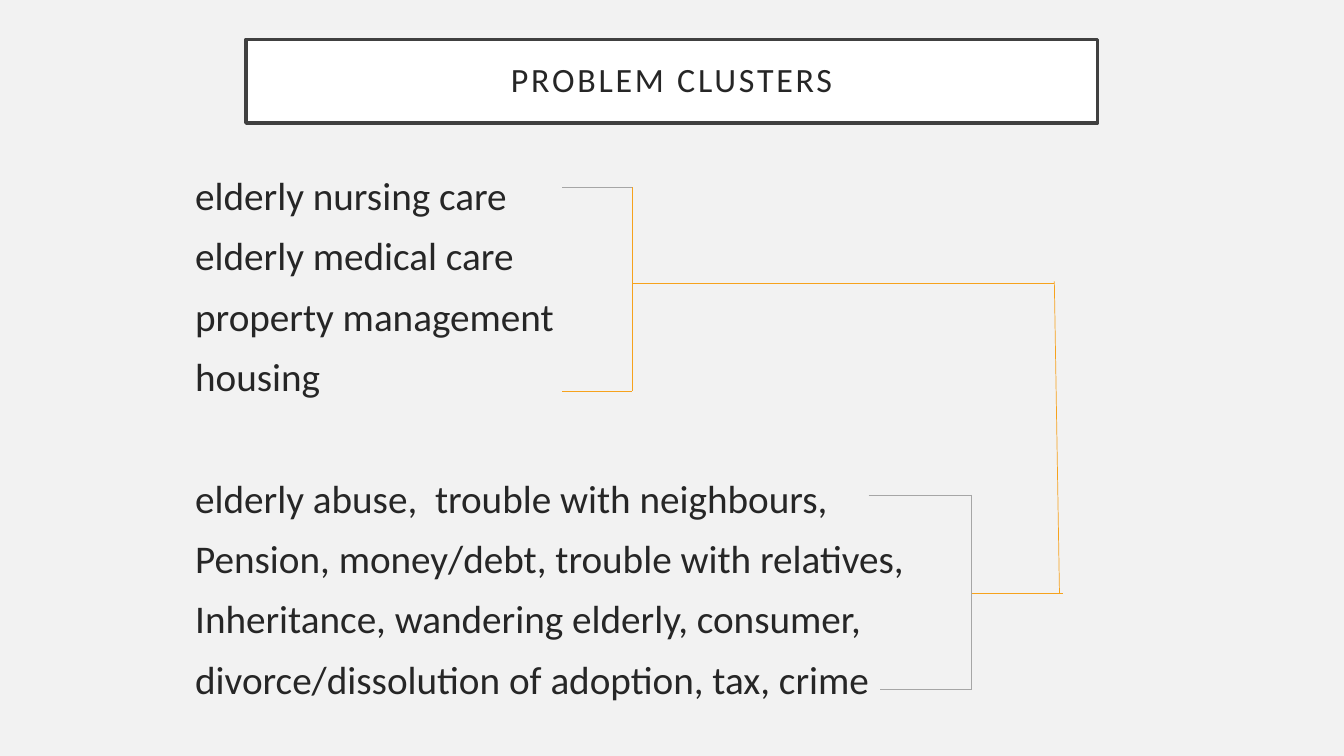
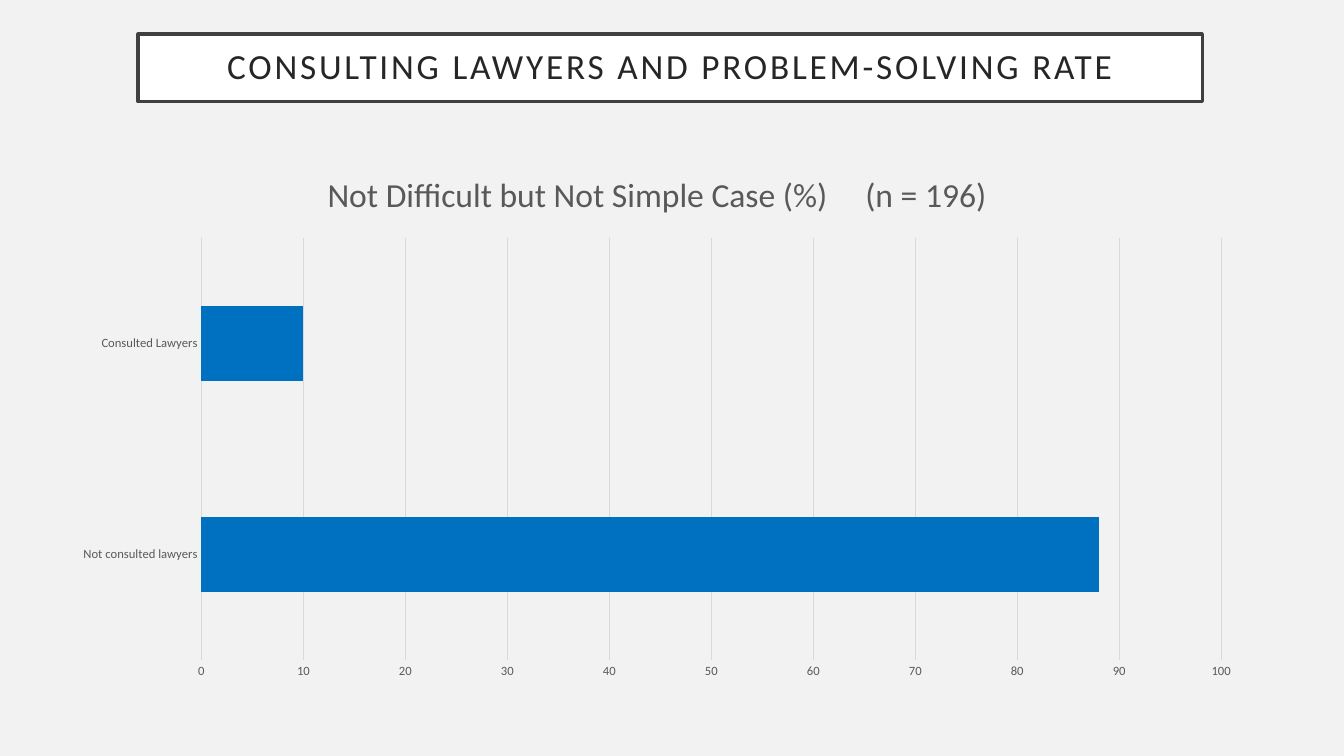
"""Build two slides on problem clusters and the effect of consulting lawyers."""
from lxml.etree import SubElement
from pptx import Presentation
from pptx.chart.data import CategoryChartData
from pptx.dml.color import RGBColor
from pptx.enum.chart import XL_CHART_TYPE as ChartType, XL_TICK_MARK as TickMark
from pptx.enum.shapes import MSO_CONNECTOR as Connector
from pptx.enum.text import MSO_ANCHOR as Anchor, MSO_AUTO_SIZE as AutoSize, PP_ALIGN as Align
from pptx.oxml.ns import qn
from pptx.util import Cm, Pt

COLOURS = {
    "background": "F2F2F2",
    "panel": "FFFFFF",
    "frame": "404040",
    "text": "262626",
    "chart_text": "595959",
    "grid": "D9D9D9",
    "bar": "0070C0",
    "orange": "F6A21D",
    "grey": "A6A6A6",
}
FONT = "Calibri"
TITLE_FRAME = {
    "vertical_anchor": Anchor.MIDDLE,
    "auto_size": AutoSize.NONE,
    "word_wrap": True,
    "margin_left": Cm(0.5),
    "margin_right": Cm(0.5),
    "margin_top": Cm(0.5),
    "margin_bottom": Cm(0.5),
}
TITLE_PARAGRAPH = {"alignment": Align.CENTER, "line_spacing": 0.9}
AXIS = {
    "major_tick_mark": TickMark.NONE,
    "minor_tick_mark": TickMark.NONE,
}


def apply(target, values):
    for key, value in values.items():
        setattr(target, key, value)


def colour(name):
    return RGBColor.from_string(COLOURS[name])


def fill(target, name):
    target.fill.solid()
    target.fill.fore_color.rgb = colour(name)


def stroke(line, name, width):
    line.color.rgb = colour(name)
    line.width = Pt(width)


def style_font(font, size, name):
    apply(font, {"name": FONT, "size": Pt(size), "bold": False, "italic": False})
    font.color.rgb = colour(name)


class Deck:
    def __init__(self):
        self.prs = Presentation()
        apply(self.prs, {"slide_width": Cm(33.87), "slide_height": Cm(19.05)})
        fill(self.prs.slide_master.background, "background")
        self.slide = None

    def add_slide(self, heading, box, size):
        layout = self.prs.slide_layouts.get_by_name("Title Only")
        self.slide = self.prs.slides.add_slide(layout)
        title = self.slide.shapes.title
        apply(title, dict(zip(("left", "top", "width", "height"), map(Cm, box))))
        fill(title, "panel")
        stroke(title.line, "frame", 2.5)
        apply(title.text_frame, TITLE_FRAME)
        paragraph = title.text_frame.paragraphs[0]
        apply(paragraph, TITLE_PARAGRAPH)
        run = paragraph.add_run()
        run.text = heading
        style_font(run.font, size, "text")
        run.font._element.set("spc", "200")

    def clusters(self, groups, box, size, gap, group_gap):
        frame = self.slide.shapes.add_textbox(*map(Cm, box)).text_frame
        frame.word_wrap = True
        paragraph = frame.paragraphs[0]
        for group_index, group in enumerate(groups):
            for line_index, problems in enumerate(group):
                if group_index or line_index:
                    paragraph = frame.add_paragraph()
                    paragraph.space_before = Pt(gap if line_index else group_gap)
                run = paragraph.add_run()
                run.text = problems
                style_font(run.font, size, "text")

    def link(self, start, end, name):
        ends = map(Cm, (*start, *end))
        connector = self.slide.shapes.add_connector(Connector.STRAIGHT, *ends)
        stroke(connector.line, name, 0.5)
        SubElement(connector._element.spPr, qn("a:effectLst"))

    def bracket(self, upper, lower, spine, names):
        corners = [upper, (spine, upper[1]), (spine, lower[1]), lower]
        for start, end, name in zip(corners, corners[1:], names):
            self.link(start, end, name)

    def bar_chart(self, heading, rates, box):
        data = CategoryChartData()
        data.categories = list(rates)
        data.add_series("Series 1", list(rates.values()))
        chart = self.slide.shapes.add_chart(
            ChartType.BAR_CLUSTERED, *map(Cm, box), data).chart
        style_font(chart.font, 10, "chart_text")
        apply(chart, {"has_legend": False, "has_title": True})
        chart.chart_title.include_in_layout = False
        run = chart.chart_title.text_frame.paragraphs[0].add_run()
        run.text = heading
        style_font(run.font, 24, "chart_text")

        plot = chart.plots[0]
        apply(plot, {"gap_width": 182, "vary_by_categories": False})
        fill(plot.series[0].format, "bar")

        for axis in (chart.category_axis, chart.value_axis):
            apply(axis, AXIS)
            style_font(axis.tick_labels.font, 9, "chart_text")
        chart.category_axis.has_major_gridlines = False
        stroke(chart.category_axis.format.line, "grid", 0.75)
        apply(chart.value_axis, {"minimum_scale": 0, "maximum_scale": 100,
                                 "major_unit": 10, "has_major_gridlines": True})
        chart.value_axis.format.line.fill.background()
        stroke(chart.value_axis.major_gridlines.format.line, "grid", 0.75)


def main():
    deck = Deck()

    deck.add_slide("PROBLEM CLUSTERS", (6.2, 0.99, 21.46, 2.11), 24.3)
    care = ["elderly nursing care", "elderly medical care",
            "property management", "housing"]
    disputes = ["elderly abuse,  trouble with neighbours,",
                "Pension, money/debt, trouble with relatives,",
                "Inheritance, wandering elderly, consumer,",
                "divorce/dissolution of adoption, tax, crime"]
    deck.clusters([care, disputes], (4.67, 4.19, 25.02, 13.87), 28, 9.5, 53.2)

    care_spine, dispute_spine = 15.93, 24.49
    deck.bracket((14.17, 4.72), (14.17, 9.86), care_spine,
                 ["grey", "orange", "orange"])
    deck.bracket((21.89, 12.47), (22.17, 17.37), dispute_spine, ["grey"] * 3)
    deck.link((care_spine, 7.14), (26.57, 7.14), "orange")
    deck.link((dispute_spine, 14.96), (26.8, 14.96), "orange")
    deck.link((26.57, 7.09), (26.7, 14.96), "orange")

    deck.add_slide("CONSULTING LAWYERS AND PROBLEM-SOLVING RATE",
                   (3.48, 0.86, 26.82, 1.7), 25.2)
    deck.bar_chart("Not Difficult but Not Simple Case (%)     (n = 196)",
                   {"Not consulted lawyers": 88, "Consulted Lawyers": 10},
                   (1.5, 3.78, 30.12, 13.59))

    deck.prs.save("out.pptx")


if __name__ == "__main__":
    main()
